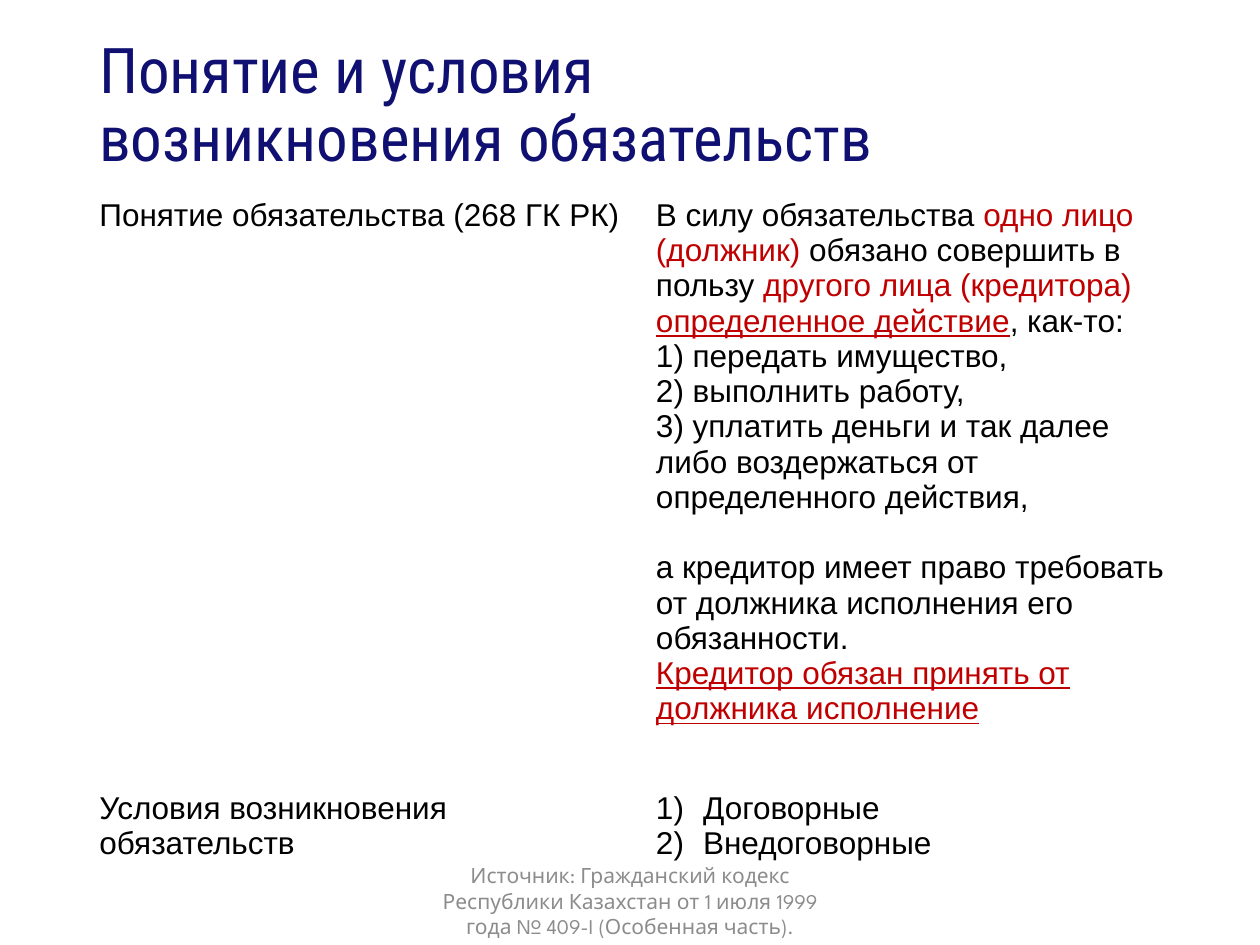
from lxml import etree
from pptx import Presentation
from pptx.dml.color import RGBColor
from pptx.enum.text import MSO_ANCHOR, PP_ALIGN
from pptx.oxml.ns import qn
from pptx.util import Cm, Pt

TOP, MIDDLE = MSO_ANCHOR.TOP, MSO_ANCHOR.MIDDLE
LEFT, CENTER = PP_ALIGN.LEFT, PP_ALIGN.CENTER
COLORS = {"title": "101072", "body": "000000", "accent": "C00000", "source": "8C8C8C"}

DEFINITION = [
    [
        ("В силу обязательства", {}),
        (" одно лицо (должник) ", {"color": "accent"}),
        ("обязано совершить в пользу ", {}),
        ("другого лица (кредитора) ", {"color": "accent"}),
        ("определенное действие", {"color": "accent", "underline": True}),
        (", как-то:", {}),
    ],
    [("1) передать имущество,", {})],
    [("2) выполнить работу,", {})],
    [("3) уплатить деньги и так далее", {})],
    [("либо воздержаться от определенного действия,", {})],
    [("а кредитор имеет право требовать от должника исполнения его обязанности.", {})],
    [("Кредитор обязан принять от должника исполнение",
      {"color": "accent", "underline": True})],
]
RIGHTS_PARAGRAPH = 5


def add_text(paragraph, text, font="Arial", size=18, color="body", underline=False):
    """Append one formatted run to a paragraph."""
    run = paragraph.add_run()
    run.text = text
    run.font.name = font
    run.font.size = Pt(size)
    run.font.underline = underline
    run.font.color.rgb = RGBColor.from_string(COLORS[color])


def add_text_box(slide, text, left, top, width, height, anchor=MIDDLE,
                 align=LEFT, line_spacing=1.0, **text_format):
    """Add a wrapped text box with one paragraph."""
    shape = slide.shapes.add_textbox(Cm(left), Cm(top), Cm(width), Cm(height))
    frame = shape.text_frame
    frame.word_wrap = True
    frame.vertical_anchor = anchor
    frame.margin_top = frame.margin_bottom = 0
    paragraph = frame.paragraphs[0]
    paragraph.alignment = align
    paragraph.line_spacing = line_spacing
    add_text(paragraph, text, **text_format)


def number_paragraph(paragraph):
    """Give a paragraph automatic numbering with a hanging indent."""
    properties = paragraph._p.get_or_add_pPr()
    properties.set("marL", str(Cm(0.95)))
    properties.set("indent", str(-Cm(0.95)))
    etree.SubElement(properties, qn("a:buFont"), typeface="+mj-lt")
    etree.SubElement(properties, qn("a:buAutoNum"), type="arabicParenR")


def fill_cell(cell, paragraphs, numbered=False):
    """Write paragraphs of formatted runs into an unfilled cell."""
    cell.fill.background()
    frame = cell.text_frame
    for index, runs in enumerate(paragraphs):
        paragraph = frame.add_paragraph() if index else frame.paragraphs[0]
        if numbered:
            number_paragraph(paragraph)
        for text, text_format in runs:
            add_text(paragraph, text, **text_format)


def add_obligations_table(slide):
    """Add the two-column table of definition and grounds."""
    table = slide.shapes.add_table(2, 2, Cm(1.75), Cm(3.86), Cm(22.44), Cm(13.92)).table
    table.first_row = table.horz_banding = False
    for column in table.columns:
        column.width = Cm(11.22)
    for row, height in zip(table.rows, (11.96, 1.96)):
        row.height = Cm(height)
    fill_cell(table.cell(0, 0), [[("Понятие обязательства (268 ГК РК)", {})]])
    fill_cell(table.cell(0, 1), DEFINITION)
    rights = table.cell(0, 1).text_frame.paragraphs[RIGHTS_PARAGRAPH]
    rights.space_before = Pt(20)
    fill_cell(table.cell(1, 0), [[("Условия возникновения обязательств", {})]])
    grounds = [[("Договорные", {})], [("Внедоговорные", {})]]
    fill_cell(table.cell(1, 1), grounds, numbered=True)


def main():
    """Build the slide and save it."""
    presentation = Presentation()
    presentation.slide_width, presentation.slide_height = Cm(25.4), Cm(19.05)
    slide = presentation.slides.add_slide(presentation.slide_layouts[6])
    add_text_box(slide, "Понятие и условия возникновения обязательств",
                 1.75, 0.79, 17.88, 3.56, anchor=TOP, line_spacing=0.9,
                 font="Roboto Condensed", size=36, color="title")
    add_obligations_table(slide)
    add_text_box(slide, "Источник: Гражданский кодекс Республики Казахстан "
                 "от 1 июля 1999 года № 409-I (Особенная часть).",
                 8.41, 17.65, 8.59, 1.02, align=CENTER,
                 font="League Spartan", size=12, color="source")
    presentation.save("out.pptx")


if __name__ == "__main__":
    main()
